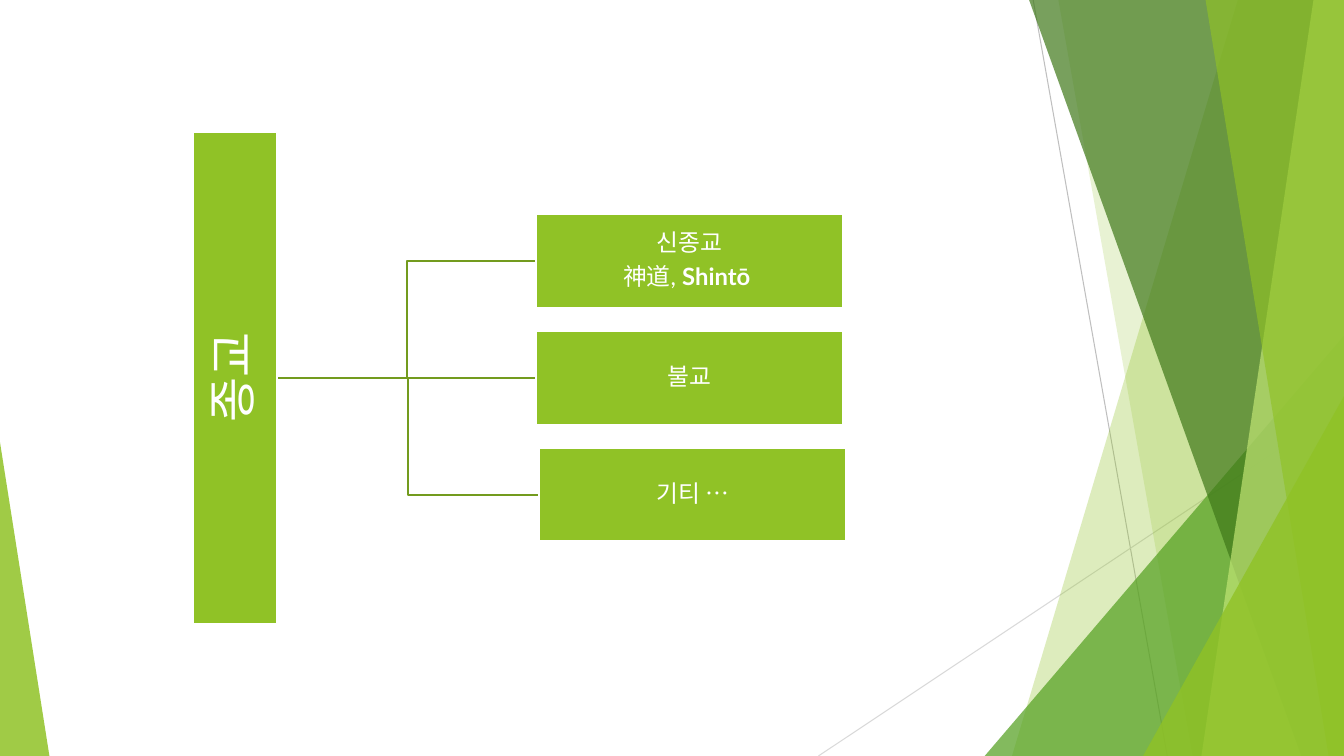
from pptx import Presentation
from pptx.dml.color import RGBColor
from pptx.enum import shapes, text
from pptx.oxml import ns, xmlchemy
from pptx.util import Pt

WIDTH, HEIGHT = 960, 540
LIME = RGBColor(0x90, 0xC2, 0x26)
PALE_LIME = RGBColor(0xC0, 0xE4, 0x74)
GREEN = RGBColor(0x54, 0xA0, 0x21)
DARK_GREEN = RGBColor(0x3F, 0x78, 0x19)
OLIVE = RGBColor(0x73, 0x9B, 0x1E)
GREY = RGBColor(0xBF, 0xBF, 0xBF)
LIGHT_GREY = RGBColor(0xD9, 0xD9, 0xD9)
WHITE = RGBColor(0xFF, 0xFF, 0xFF)

ROOT_CENTER = (167.8, 269.8)
BRANCH_SIZE = (219.2, 66.7)
BRANCH_STEP = 83.5
BRANCHES = [
    (383, [[("신종교", False)], [("神道, ", False), ("Shintō ", True)]]),
    (383, [[("불교", False)]]),
    (385.2, [[("기티 …", False)]]),
]


def apply(target, values):
    for name, value in values.items():
        setattr(target, name, value)


def add_line(page, kind, start, end, color, width):
    line = page.shapes.add_connector(kind, *map(Pt, start + end))
    line.line.color.rgb = color
    line.line.width = Pt(width)
    line.element.spPr.append(xmlchemy.OxmlElement("a:effectLst"))


def tint(shape, color, opacity):
    shape.shadow.inherit = False
    shape.fill.solid()
    shape.fill.fore_color.rgb = color
    shape.line.fill.background()
    alpha = xmlchemy.OxmlElement("a:alpha")
    alpha.set("val", str(opacity * 1000))
    shape.element.spPr.find(".//" + ns.qn("a:srgbClr")).append(alpha)


def add_slab(page, top_x, bottom_x, color, opacity):
    outline = page.shapes.build_freeform(Pt(top_x), Pt(0))
    corners = [(WIDTH, 0), (WIDTH, HEIGHT), (bottom_x, HEIGHT)]
    outline.add_line_segments([(Pt(x), Pt(y)) for x, y in corners])
    tint(outline.convert_to_shape(), color, opacity)


def add_corner(page, left, top, width, peak, color, opacity):
    corner = page.shapes.add_shape(
        shapes.MSO_SHAPE.ISOSCELES_TRIANGLE,
        Pt(left), Pt(top), Pt(width), Pt(HEIGHT - top))
    corner.adjustments[0] = peak
    tint(corner, color, opacity)


def add_box(page, center, size, paragraphs, font_size, inset, rotation=0):
    left, top = (middle - length / 2 for middle, length in zip(center, size))
    box = page.shapes.add_shape(
        shapes.MSO_SHAPE.RECTANGLE, Pt(left), Pt(top), *map(Pt, size))
    box.rotation = rotation
    box.shadow.inherit = False
    box.fill.solid()
    box.fill.fore_color.rgb = LIME
    box.line.color.rgb = WHITE
    box.line.width = Pt(1.5)
    frame = box.text_frame
    apply(frame, {"word_wrap": True,
                  "vertical_anchor": text.MSO_ANCHOR.MIDDLE})
    apply(frame, {"margin_" + side: Pt(inset)
                  for side in ("left", "top", "right", "bottom")})
    for index, spans in enumerate(paragraphs):
        para = frame.add_paragraph() if index else frame.paragraphs[0]
        apply(para, {"alignment": text.PP_ALIGN.CENTER, "line_spacing": 0.9,
                     "space_after": Pt(round(font_size * 0.35))})
        for words, bold in spans:
            span = para.add_run()
            span.text = words
            apply(span.font, {"name": "Lato", "size": Pt(font_size),
                              "bold": bold})
            span.font.color.rgb = WHITE


def add_backdrop(page):
    straight = shapes.MSO_CONNECTOR.STRAIGHT
    add_line(page, straight, (738, 0), (833.8, HEIGHT), GREY, 0.75)
    add_line(page, straight, (WIDTH, 290), (584.6, HEIGHT), LIGHT_GREY, 0.75)
    add_slab(page, 884.2, 722.9, LIME, 30)
    add_slab(page, 756, 851.8, LIME, 20)
    add_corner(page, 703.4, 239.8, 256.6, 1, GREEN, 72)
    add_slab(page, 735.1, 929.5, DARK_GREEN, 70)
    add_slab(page, 938.2, 858.2, PALE_LIME, 70)
    add_slab(page, 861.1, 949, LIME, 65)
    add_corner(page, 816.5, 283, 143.5, 1, LIME, 80)
    add_corner(page, 0, 316, 35.3, 0, LIME, 85)


def add_tree(page):
    middle = HEIGHT / 2
    for index, (left, paragraphs) in enumerate(BRANCHES):
        offset = (index - 1) * BRANCH_STEP
        kind = (shapes.MSO_CONNECTOR.ELBOW if offset
                else shapes.MSO_CONNECTOR.STRAIGHT)
        add_line(page, kind, (198, middle), (left, middle + offset), OLIVE, 1.5)
        center = (left + BRANCH_SIZE[0] / 2, middle + offset)
        add_box(page, center, BRANCH_SIZE, paragraphs, 17, 0.8)
    add_box(page, ROOT_CENTER, (351.4, 59.8), [[("종교", False)]], 35, 1.6, 270)


def main():
    deck = Presentation()
    apply(deck, {"slide_width": Pt(WIDTH), "slide_height": Pt(HEIGHT)})
    page = deck.slides.add_slide(deck.slide_layouts[6])
    add_backdrop(page)
    add_tree(page)
    deck.save("out.pptx")


if __name__ == "__main__":
    main()
